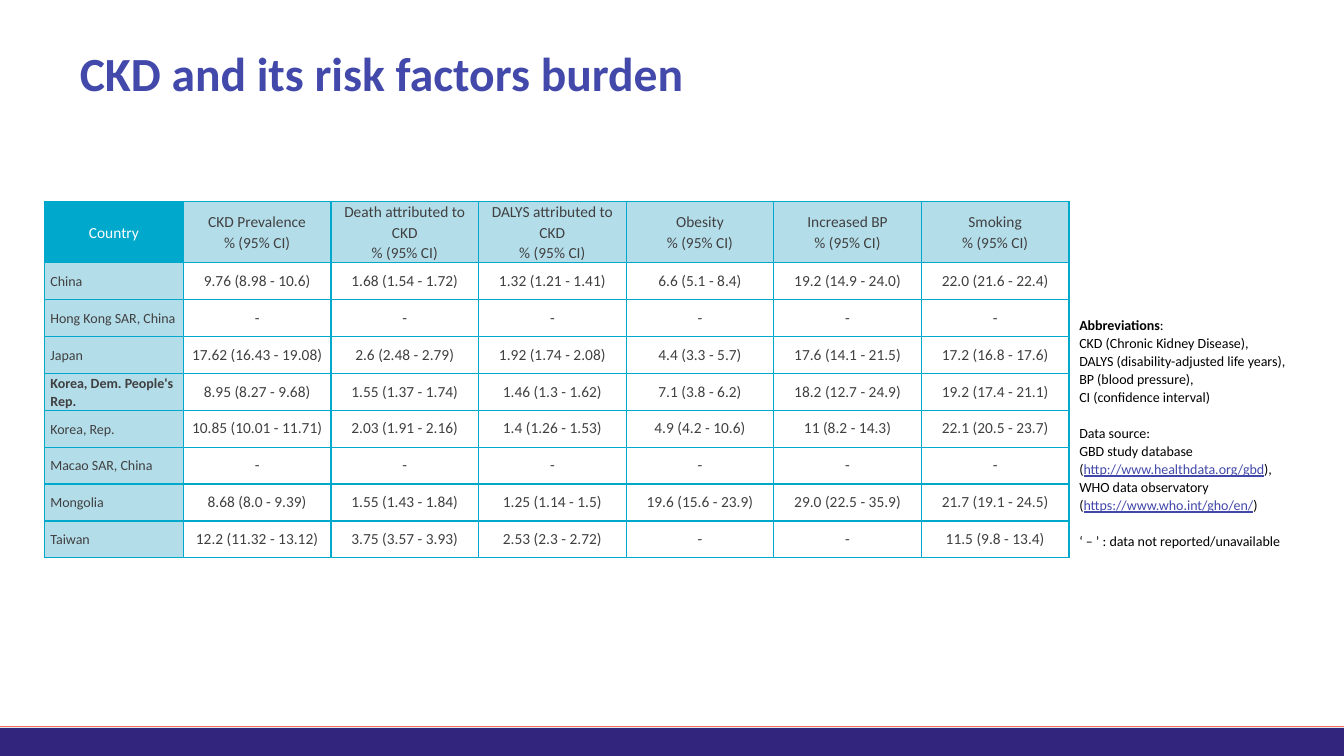
from dataclasses import dataclass

from lxml import etree
from pptx import Presentation
from pptx import util as u
from pptx.dml.color import RGBColor
from pptx.enum import shapes, text
from pptx.oxml.ns import qn

FONT = "Calibri"
WHITE, BLACK, GREY = "FFFFFF", "000000", "404040"
TEAL, PALE_TEAL = "00A8CB", "B4DDEA"
TITLE_BLUE, LINK_BLUE = "4249AA", "4248A9"
FOOTER_NAVY, FOOTER_CORAL = "32257E", "FE7055"
SLIDE_WIDTH, SLIDE_HEIGHT = 33.87, 19.05
FOOTER_TOP = 18.34
COUNTRY_WIDTH, FACTOR_WIDTH = 3.5, 3.72
HEADER_HEIGHT, ROW_HEIGHT = 1.42, 0.93
CENTER, LEFT = text.PP_ALIGN.CENTER, text.PP_ALIGN.LEFT


@dataclass(frozen=True)
class CellStyle:
    fill: str
    color: str = GREY
    size: float = 11
    align: text.PP_ALIGN = CENTER
    spacing: float = 1.07
    side_margin: float = 0.08


@dataclass(frozen=True)
class Phrase:
    words: str
    bold: bool = False
    link: bool = False


@dataclass(frozen=True)
class NoteLine:
    phrases: tuple[Phrase, ...]
    space_before: float = 0


CORNER = CellStyle(TEAL, color=WHITE)
HEADER = CellStyle(PALE_TEAL)
COUNTRY = CellStyle(PALE_TEAL, size=10, align=LEFT, side_margin=0.15)
VALUE = CellStyle(WHITE, spacing=1.0, side_margin=0)

FACTORS = ["CKD Prevalence", "Death attributed to CKD", "DALYS attributed to CKD",
           "Obesity", "Increased BP", "Smoking"]
NO_DATA = ["-"] * len(FACTORS)
BOLD_COUNTRY = "Korea, Dem. People's Rep."
BURDEN = {
    "China": ["9.76 (8.98 - 10.6)", "1.68 (1.54 - 1.72)", "1.32 (1.21 - 1.41)",
              "6.6 (5.1 - 8.4)", "19.2 (14.9 - 24.0)", "22.0 (21.6 - 22.4)"],
    "Hong Kong SAR, China": NO_DATA,
    "Japan": ["17.62 (16.43 - 19.08)", "2.6 (2.48 - 2.79)", "1.92 (1.74 - 2.08)",
              "4.4 (3.3 - 5.7)", "17.6 (14.1 - 21.5)", "17.2 (16.8 - 17.6)"],
    BOLD_COUNTRY: ["8.95 (8.27 - 9.68)", "1.55 (1.37 - 1.74)", "1.46 (1.3 - 1.62)",
                   "7.1 (3.8 - 6.2)", "18.2 (12.7 - 24.9)", "19.2 (17.4 - 21.1)"],
    "Korea, Rep.": ["10.85 (10.01 - 11.71)", "2.03 (1.91 - 2.16)", "1.4 (1.26 - 1.53)",
                    "4.9 (4.2 - 10.6)", "11 (8.2 - 14.3)", "22.1 (20.5 - 23.7)"],
    "Macao SAR, China": NO_DATA,
    "Mongolia": ["8.68 (8.0 - 9.39)", "1.55 (1.43 - 1.84)", "1.25 (1.14 - 1.5)",
                 "19.6 (15.6 - 23.9)", "29.0 (22.5 - 35.9)", "21.7 (19.1 - 24.5)"],
    "Taiwan": ["12.2 (11.32 - 13.12)", "3.75 (3.57 - 3.93)", "2.53 (2.3 - 2.72)",
               "-", "-", "11.5 (9.8 - 13.4)"],
}

NOTES = [
    NoteLine((Phrase("Abbreviations", bold=True), Phrase(":"))),
    NoteLine((Phrase("CKD (Chronic Kidney Disease),"),)),
    NoteLine((Phrase("DALYS (disability-adjusted life years),"),)),
    NoteLine((Phrase("BP (blood pressure),"),)),
    NoteLine((Phrase("CI (confidence interval)"),)),
    NoteLine((Phrase("Data source:"),), space_before=13),
    NoteLine((Phrase("GBD study database"),)),
    NoteLine((Phrase("("), Phrase("http://www.healthdata.org/gbd", link=True),
              Phrase("),"))),
    NoteLine((Phrase("WHO data observatory"),)),
    NoteLine((Phrase("("), Phrase("https://www.who.int/gho/en/", link=True),
              Phrase(")"))),
    NoteLine((Phrase("‘ – ’ : data not reported/unavailable"),), space_before=13),
]


def rgb(color: str) -> RGBColor:
    return RGBColor.from_string(color)


def format_font(font, size: float, color: str, bold: bool = False) -> None:
    font.name = FONT
    font.size = u.Pt(size)
    font.bold = bold
    font.color.rgb = rgb(color)


def add_footer(slide) -> None:
    band = slide.shapes.add_shape(
        shapes.MSO_SHAPE.RECTANGLE, 0, u.Cm(FOOTER_TOP),
        u.Cm(SLIDE_WIDTH), u.Cm(SLIDE_HEIGHT - FOOTER_TOP))
    band.shadow.inherit = False
    band.fill.solid()
    band.fill.fore_color.rgb = rgb(FOOTER_NAVY)
    band.line.fill.background()

    rule_top = u.Cm(FOOTER_TOP - 0.03)
    rule = slide.shapes.add_connector(
        shapes.MSO_CONNECTOR.STRAIGHT, 0, rule_top, u.Cm(SLIDE_WIDTH), rule_top)
    rule.line.color.rgb = rgb(FOOTER_CORAL)
    rule.line.width = u.Pt(0.75)
    etree.SubElement(rule._element.spPr, qn("a:effectLst"))


def add_title(slide, words: str) -> None:
    title = slide.shapes.title
    title.left, title.top = u.Cm(2.01), u.Cm(0.2)
    title.width, title.height = u.Cm(32.59), u.Cm(3.45)
    frame = title.text_frame
    frame.text = words
    frame.margin_left = frame.margin_right = 0
    frame.vertical_anchor = text.MSO_ANCHOR.MIDDLE
    paragraph = frame.paragraphs[0]
    paragraph.alignment = LEFT
    paragraph.line_spacing = 0.9
    format_font(paragraph.runs[0].font, 34, TITLE_BLUE, bold=True)


def add_borders(cell) -> None:
    properties = cell._tc.get_or_add_tcPr()
    for side in ("lnL", "lnR", "lnT", "lnB"):
        line = etree.SubElement(properties, qn(f"a:{side}"), w=str(u.Pt(1)))
        fill = etree.SubElement(line, qn("a:solidFill"))
        etree.SubElement(fill, qn("a:srgbClr"), val=TEAL)


def fill_cell(cell, words: str, style: CellStyle, bold: bool = False) -> None:
    add_borders(cell)
    cell.fill.solid()
    cell.fill.fore_color.rgb = rgb(style.fill)
    cell.margin_left = cell.margin_right = u.Cm(style.side_margin)
    cell.margin_top = cell.margin_bottom = 0
    cell.vertical_anchor = text.MSO_ANCHOR.MIDDLE
    cell.text_frame.text = words
    for paragraph in cell.text_frame.paragraphs:
        paragraph.alignment = style.align
        paragraph.line_spacing = style.spacing
        format_font(paragraph.runs[0].font, style.size, style.color, bold)


def add_burden_table(slide) -> None:
    row_count, column_count = len(BURDEN) + 1, len(FACTORS) + 1
    table = slide.shapes.add_table(
        row_count, column_count, u.Cm(1.12), u.Cm(5.08),
        u.Cm(COUNTRY_WIDTH + len(FACTORS) * FACTOR_WIDTH),
        u.Cm(HEADER_HEIGHT + len(BURDEN) * ROW_HEIGHT)).table
    table.first_row = table.horz_banding = False
    for index, column in enumerate(table.columns):
        column.width = u.Cm(FACTOR_WIDTH if index else COUNTRY_WIDTH)
    for index, row in enumerate(table.rows):
        row.height = u.Cm(ROW_HEIGHT if index else HEADER_HEIGHT)

    fill_cell(table.cell(0, 0), "Country", CORNER)
    for column, factor in enumerate(FACTORS, start=1):
        fill_cell(table.cell(0, column), f"{factor}\n% (95% CI)", HEADER)
    for row, (country, values) in enumerate(BURDEN.items(), start=1):
        fill_cell(table.cell(row, 0), country, COUNTRY, bold=country == BOLD_COUNTRY)
        for column, value in enumerate(values, start=1):
            fill_cell(table.cell(row, column), value, VALUE)


def add_notes_box(slide) -> None:
    box = slide.shapes.add_textbox(u.Cm(26.95), u.Cm(7.82), u.Cm(6.55), u.Cm(6.17))
    frame = box.text_frame
    frame.word_wrap = True
    frame.auto_size = text.MSO_AUTO_SIZE.SHAPE_TO_FIT_TEXT
    for index, line in enumerate(NOTES):
        paragraph = frame.add_paragraph() if index else frame.paragraphs[0]
        paragraph.line_spacing = 1.07
        if line.space_before:
            paragraph.space_before = u.Pt(line.space_before)
        for phrase in line.phrases:
            run = paragraph.add_run()
            run.text = phrase.words
            format_font(run.font, 10, LINK_BLUE if phrase.link else BLACK, phrase.bold)
            run.font.underline = phrase.link


def main() -> None:
    presentation = Presentation()
    presentation.slide_width = u.Cm(SLIDE_WIDTH)
    presentation.slide_height = u.Cm(SLIDE_HEIGHT)
    slide = presentation.slides.add_slide(presentation.slide_layouts[5])
    add_footer(slide)
    add_title(slide, "CKD and its risk factors burden")
    add_burden_table(slide)
    add_notes_box(slide)
    presentation.save("out.pptx")


if __name__ == "__main__":
    main()
